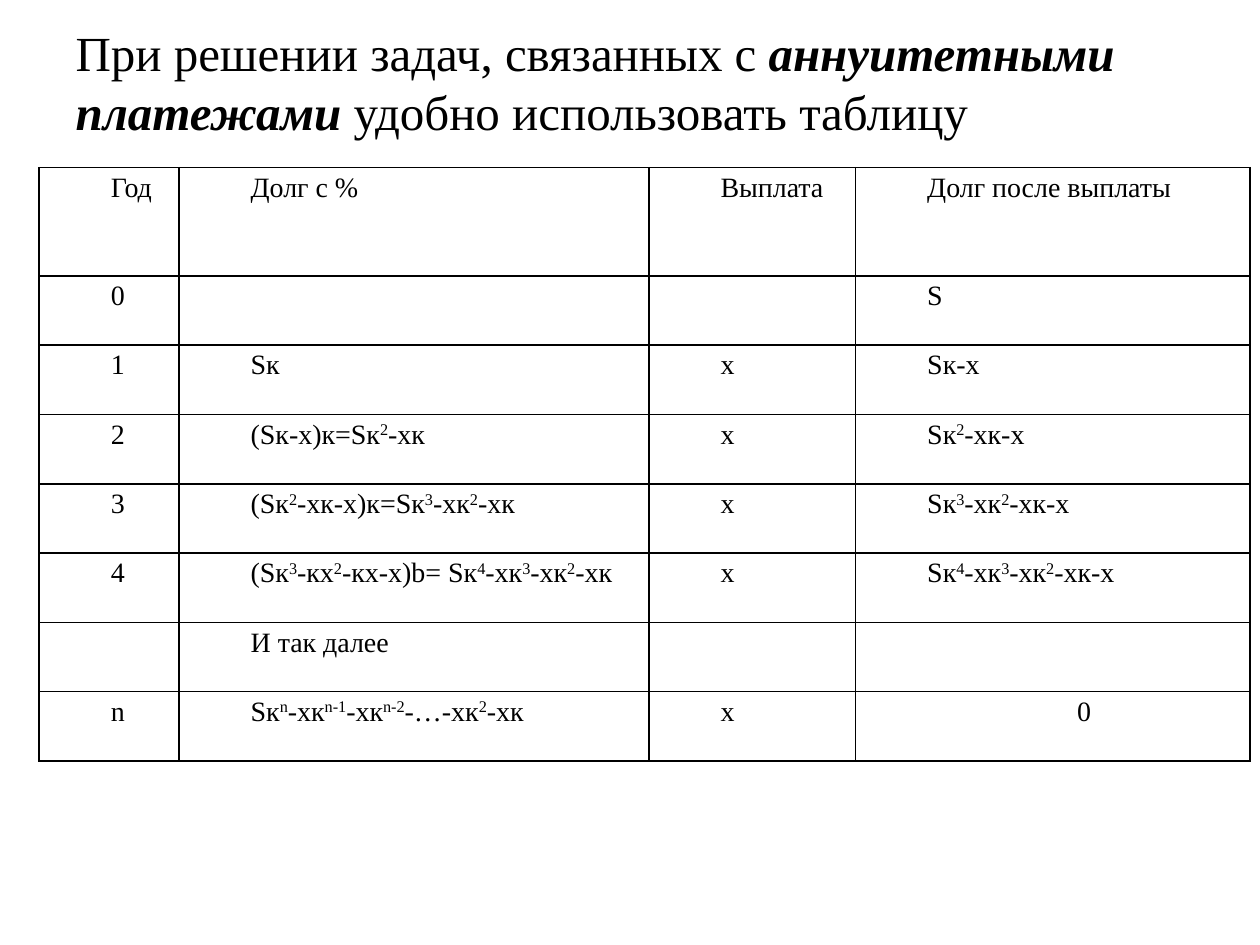
from typing import NamedTuple

from lxml.etree import SubElement
from pptx import Presentation
from pptx.dml.color import RGBColor
from pptx.enum.text import MSO_ANCHOR, MSO_AUTO_SIZE, PP_ALIGN
from pptx.oxml.ns import qn
from pptx.util import Inches, Pt

FONT = "Times New Roman"
BLACK = "000000"
SUPERSCRIPT_MARK = "^"


class PaymentRow(NamedTuple):
    year: str
    debt_with_interest: str
    payment: str
    debt_after_payment: str
    height: float = 0.55
    last_alignment: PP_ALIGN = PP_ALIGN.LEFT


COLUMN_WIDTHS = (1.11, 3.73, 1.64, 3.13)
PAYMENT_ROWS = (
    PaymentRow("Год", "Долг с %", "Выплата", "Долг после выплаты", height=0.86),
    PaymentRow("0", "", "", "S"),
    PaymentRow("1", "Sк", "x", "Sк-x"),
    PaymentRow("2", "(Sк-x)к=Sк^2^-xк", "x", "Sк^2^-xк-x"),
    PaymentRow("3", "(Sк^2^-xк-x)к=Sк^3^-xк^2^-xк", "x", "Sк^3^-xк^2^-xк-x"),
    PaymentRow("4", "(Sк^3^-кх^2^-кx-x)b= Sк^4^-xк^3^-xк^2^-xк", "x",
               "Sк^4^-xк^3^-xк^2^-xк-x"),
    PaymentRow("", "И так далее", "", ""),
    PaymentRow("n", "Sк^n^-xк^n-1^-xк^n-2^-…-xк^2^-xк", "x", "0",
               last_alignment=PP_ALIGN.CENTER),
)


def rgb(color: str) -> RGBColor:
    return RGBColor.from_string(color)


def add_text(paragraph, text: str, *, size: float, color: str = BLACK,
             emphasis: bool = False, superscript: bool = False) -> None:
    run = paragraph.add_run()
    run.text = text
    font = run.font
    font.name = FONT
    font.size = Pt(size)
    font.color.rgb = rgb(color)
    font.bold = font.italic = emphasis
    if superscript:
        run._r.get_or_add_rPr().set("baseline", "30000")


def add_title(slide) -> None:
    title = slide.shapes.title
    title.left, title.top = Inches(0.5), Inches(0.33)
    title.width, title.height = Inches(9), Inches(0.63)
    frame = title.text_frame
    frame.auto_size = MSO_AUTO_SIZE.NONE
    frame.word_wrap = True
    frame.vertical_anchor = MSO_ANCHOR.MIDDLE
    heading = frame.paragraphs[0]
    heading.alignment = PP_ALIGN.LEFT
    add_text(heading, "При решении задач, связанных с ", size=28)
    add_text(heading, "аннуитетными платежами ", size=28, emphasis=True)
    add_text(heading, "удобно использовать таблицу", size=28)


def set_borders(cell, color: str = BLACK, width: float = 1) -> None:
    properties = cell._tc.get_or_add_tcPr()
    for side in ("lnL", "lnR", "lnT", "lnB"):
        border = SubElement(properties, qn(f"a:{side}"), w=str(Pt(width)))
        SubElement(SubElement(border, qn("a:solidFill")), qn("a:srgbClr"), val=color)


def fill_cell(cell, formula: str, alignment: PP_ALIGN) -> None:
    set_borders(cell)
    cell.fill.background()
    cell.margin_left = cell.margin_right = Inches(0.07)
    cell.margin_top = cell.margin_bottom = 0
    if not formula:
        return
    paragraph = cell.text_frame.paragraphs[0]
    paragraph.alignment = alignment
    paragraph.line_spacing = 1.15
    paragraph._p.get_or_add_pPr().set("marL", str(Inches(0.5)))
    for index, part in enumerate(formula.split(SUPERSCRIPT_MARK)):
        add_text(paragraph, part, size=16, superscript=index % 2 == 1)


def add_payment_table(slide) -> None:
    height = sum(row.height for row in PAYMENT_ROWS)
    table = slide.shapes.add_table(
        len(PAYMENT_ROWS), len(COLUMN_WIDTHS), Inches(0.31), Inches(1.33),
        Inches(sum(COLUMN_WIDTHS)), Inches(height)).table
    table.first_row = table.horz_banding = False
    for column, width in zip(table.columns, COLUMN_WIDTHS):
        column.width = Inches(width)
    for table_row, row in zip(table.rows, PAYMENT_ROWS):
        table_row.height = Inches(row.height)
        formulas = (row.year, row.debt_with_interest, row.payment, row.debt_after_payment)
        alignments = (PP_ALIGN.LEFT,) * 3 + (row.last_alignment,)
        for cell, formula, alignment in zip(table_row.cells, formulas, alignments):
            fill_cell(cell, formula, alignment)


def main() -> None:
    presentation = Presentation()
    presentation.slide_width, presentation.slide_height = Inches(10), Inches(7.5)
    slide = presentation.slides.add_slide(presentation.slide_layouts[5])
    slide.background.fill.solid()
    slide.background.fill.fore_color.rgb = rgb("FFFFFF")
    add_title(slide)
    add_payment_table(slide)
    presentation.save("out.pptx")


if __name__ == "__main__":
    main()
